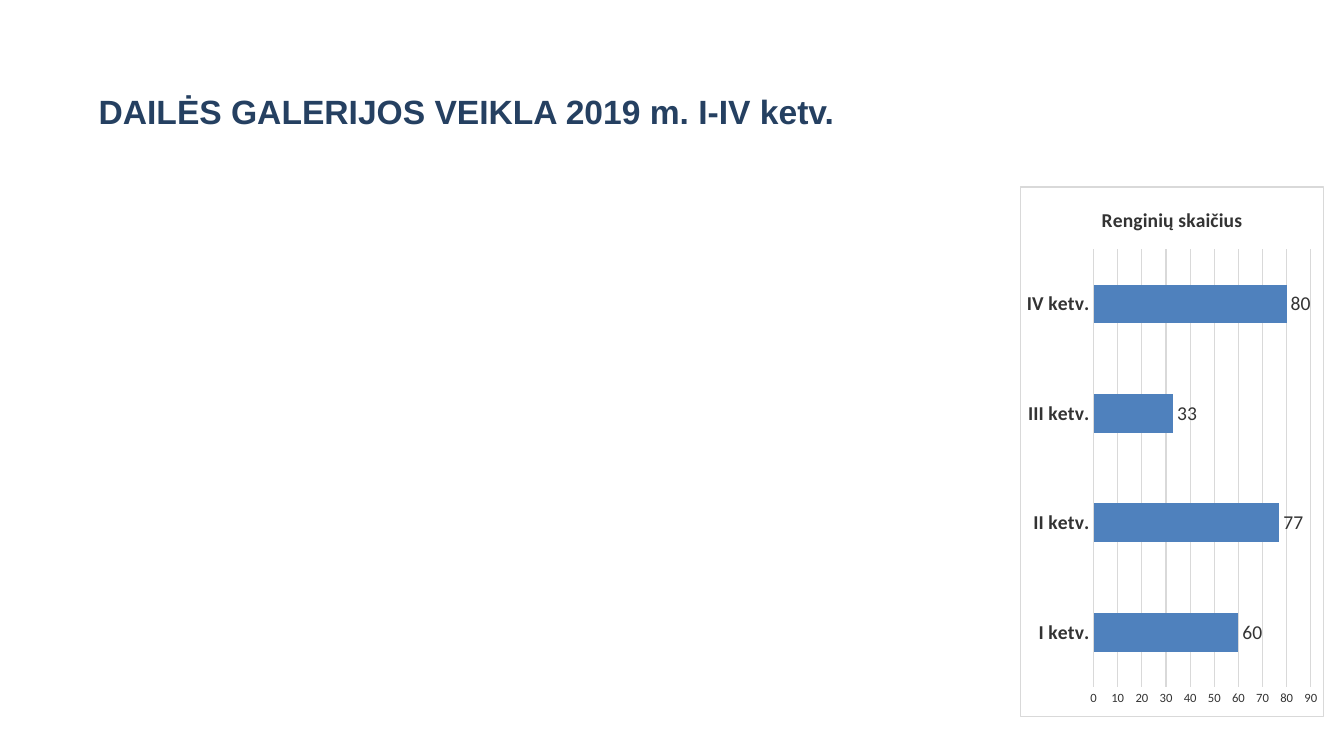
from lxml import etree
from pptx import Presentation
from pptx.chart.data import CategoryChartData
from pptx.dml.color import RGBColor
from pptx.enum.chart import XL_CHART_TYPE, XL_LABEL_POSITION, XL_TICK_MARK
from pptx.enum.text import MSO_ANCHOR
from pptx.util import Inches, Pt

BARS = XL_CHART_TYPE.BAR_CLUSTERED
OUTSIDE = XL_LABEL_POSITION.OUTSIDE_END
NO_TICK = XL_TICK_MARK.NONE
MIDDLE = MSO_ANCHOR.MIDDLE

COLORS = {"navy": "254061", "text": "333333", "rule": "D9D9D9",
          "bar": "4F81BD", "paper": "FFFFFF"}
WIDE, HIGH = 13.33, 7.5
THIN = 0.75
FRAME = """<c:spPr xmlns:c="http://schemas.openxmlformats.org/drawingml/2006/chart"
 xmlns:a="http://schemas.openxmlformats.org/drawingml/2006/main">
<a:solidFill><a:srgbClr val="{fill}"/></a:solidFill>
<a:ln w="{width}"><a:solidFill><a:srgbClr val="{line}"/></a:solidFill></a:ln>
</c:spPr>"""


def put(item, values):
    for name, value in values.items():
        setattr(item, name, value)


class Deck:
    def __init__(self):
        self.show = Presentation()
        put(self.show, {"slide_width": Inches(WIDE), "slide_height": Inches(HIGH)})
        self.slide = self.show.slides.add_slide(self.show.slide_layouts[6])

    def box(self, left, top, width, height):
        """Turn shares of the slide's size into lengths."""
        return (Inches(WIDE * left), Inches(HIGH * top),
                Inches(WIDE * width), Inches(HIGH * height))

    def color(self, name):
        return RGBColor.from_string(COLORS[name])

    def style(self, font, size, color="text", bold=False, face="Calibri"):
        put(font, {"size": Pt(size), "bold": bold, "name": face})
        font.color.rgb = self.color(color)

    def rule(self, line):
        line.width = Pt(THIN)
        line.color.rgb = self.color("rule")

    def title(self, text, *place):
        frame = self.slide.shapes.add_textbox(*self.box(*place)).text_frame
        put(frame, {"word_wrap": True, "vertical_anchor": MIDDLE})
        line = frame.paragraphs[0]
        line.line_spacing = 0.9
        run = line.add_run()
        run.text = text
        self.style(run.font, 24, "navy", True, "Arial")

    def chart(self, name, data, *place):
        source = CategoryChartData()
        source.categories = list(data)
        source.add_series(name, list(data.values()))
        chart = self.slide.shapes.add_chart(BARS, *self.box(*place), source).chart
        chart.has_legend = False
        self.style(chart.font, 10)

        chart.has_title = True
        head = chart.chart_title.text_frame
        head.text = name
        self.style(head.paragraphs[0].runs[0].font, 14, bold=True)

        plot = chart.plots[0]
        put(plot, {"gap_width": 182, "vary_by_categories": False,
                   "has_data_labels": True})
        put(plot.data_labels, {"show_value": True, "position": OUTSIDE})
        self.style(plot.data_labels.font, 14)
        fill = plot.series[0].format.fill
        fill.solid()
        fill.fore_color.rgb = self.color("bar")

        cats, vals = chart.category_axis, chart.value_axis
        for axis, size, bold in ((cats, 14, True), (vals, 9, False)):
            put(axis, {"major_tick_mark": NO_TICK, "minor_tick_mark": NO_TICK})
            self.style(axis.tick_labels.font, size, bold=bold)
        put(vals, {"minimum_scale": 0, "maximum_scale": 90, "major_unit": 10,
                   "has_major_gridlines": True})
        self.rule(cats.format.line)
        self.rule(vals.major_gridlines.format.line)
        vals.format.line.fill.background()
        self.frame(chart)

    def frame(self, chart):
        """Give the chart area its fill and border."""
        xml = FRAME.format(fill=COLORS["paper"], line=COLORS["rule"], width=Pt(THIN))
        body = chart.element.find("{*}chart")
        body.addnext(etree.fromstring(xml))

    def save(self):
        self.show.save("out.pptx")


def main():
    deck = Deck()
    deck.title("DAILĖS GALERIJOS VEIKLA 2019 m. I-IV ketv.",
               0.88 / WIDE, 0.4 / HIGH, 11.5 / WIDE, 1.45 / HIGH)
    deck.chart("Renginių skaičius",
               {"I ketv.": 60, "II ketv.": 77, "III ketv.": 33, "IV ketv.": 80},
               10.12 / WIDE, 1.85 / HIGH, 3.01 / WIDE, 5.26 / HIGH)
    deck.save()


if __name__ == "__main__":
    main()
